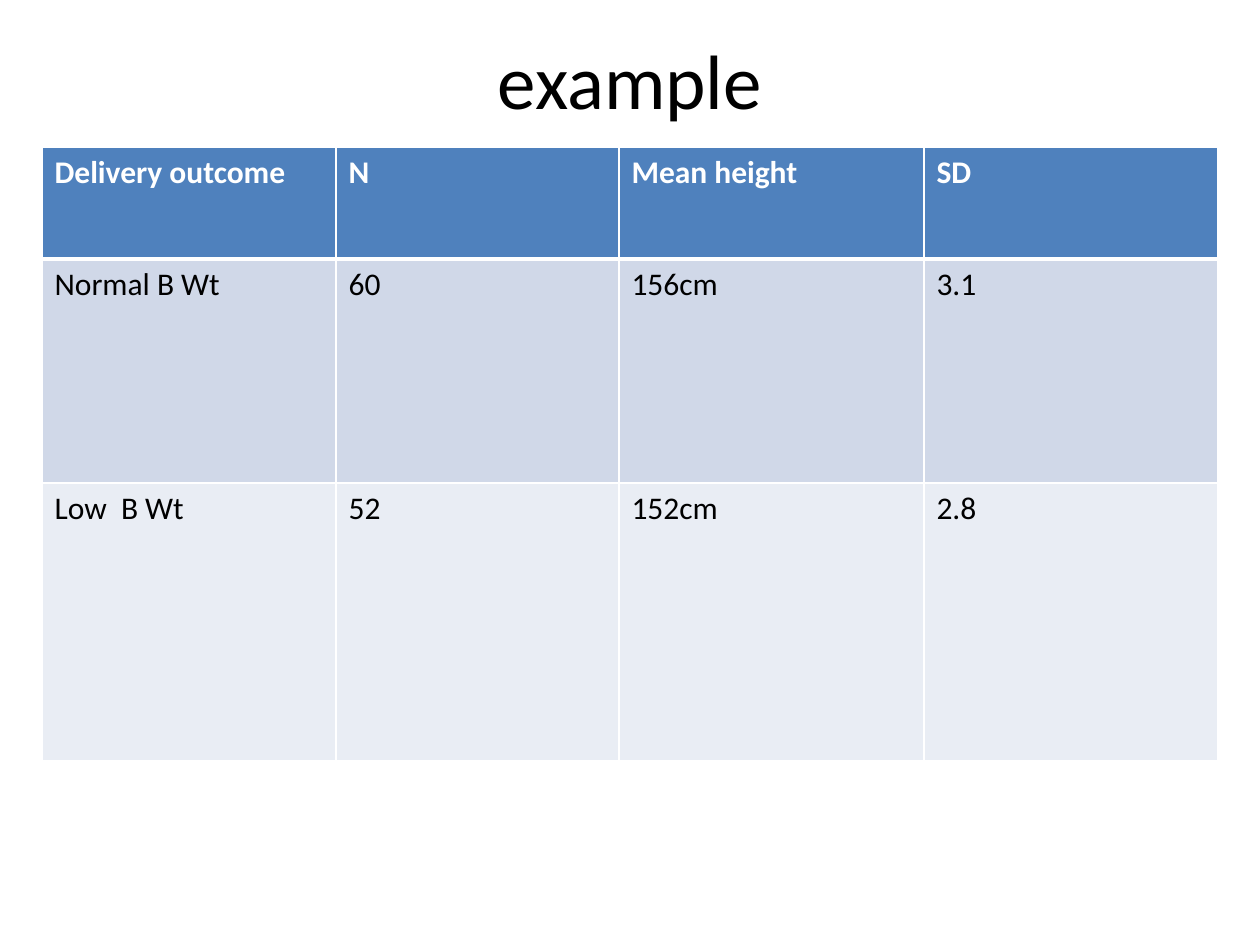
from lxml.etree import SubElement
from pptx import Presentation
from pptx.dml.color import RGBColor
from pptx.enum.text import MSO_ANCHOR, PP_ALIGN
from pptx.oxml.ns import qn
from pptx.util import Pt

SCALE = 914400 / 126  # EMU in one px
WHITE = RGBColor(0xFF, 0xFF, 0xFF)
BLACK = RGBColor(0x00, 0x00, 0x00)
BLUE = RGBColor(0x4F, 0x81, 0xBD)
MID = RGBColor(0xD0, 0xD8, 0xE8)
PALE = RGBColor(0xE9, 0xED, 0xF4)

COLS = [294, 283, 305, 294]
ROWS = [112, 224, 278]
FILLS = [BLUE, MID, PALE]
DATA = [
    ["Delivery outcome", "N", "Mean height", "SD"],
    ["Normal B Wt", "60", "156cm", "3.1"],
    ["Low  B Wt", "52", "152cm", "2.8"],
]


def px(num):
    return round(num * SCALE)


class Deck:
    face = "Calibri"

    def __init__(self, width, height):
        self.file = Presentation()
        self.file.slide_width = px(width)
        self.file.slide_height = px(height)
        self.slide = self.file.slides.add_slide(self.file.slide_layouts[6])

    def style(self, para, size, color, bold=False):
        font = para.font
        font.name, font.size, font.bold = self.face, Pt(size), bold
        font.color.rgb = color

    def title(self, text, left, top, width, height):
        box = self.slide.shapes.add_textbox(*map(px, (left, top, width, height)))
        frame = box.text_frame
        frame.word_wrap = True
        frame.vertical_anchor = MSO_ANCHOR.MIDDLE
        frame.text = text
        para = frame.paragraphs[0]
        para.alignment = PP_ALIGN.CENTER
        self.style(para, 44, BLACK)

    def edge(self, cell, side, width):
        line = SubElement(cell._tc.get_or_add_tcPr(), qn("a:ln" + side), w=str(Pt(width)))
        fill = SubElement(line, qn("a:solidFill"))
        SubElement(fill, qn("a:srgbClr"), val=str(WHITE))

    def table(self, data, left, top, cols, rows, fills):
        """Draw a grid whose first row is a bold header with a thick rule below."""
        size = px(sum(cols)), px(sum(rows))
        grid = self.slide.shapes.add_table(len(rows), len(cols), px(left), px(top), *size).table
        for col, width in zip(grid.columns, cols):
            col.width = px(width)
        for i, (row, height) in enumerate(zip(grid.rows, rows)):
            row.height = px(height)
            head = i == 0
            for cell, text in zip(row.cells, data[i]):
                for side in "LRTB":
                    thick = side == "B" and head or side == "T" and i == 1
                    self.edge(cell, side, 3 if thick else 1)
                cell.fill.solid()
                cell.fill.fore_color.rgb = fills[i]
                cell.text = text
                para = cell.text_frame.paragraphs[0]
                self.style(para, 18, WHITE if head else BLACK, head)


def main():
    deck = Deck(1260, 945)
    deck.title("example", 42, 0, 1176, 158)
    deck.table(DATA, 42, 147, COLS, ROWS, FILLS)
    deck.file.save("out.pptx")


if __name__ == "__main__":
    main()
